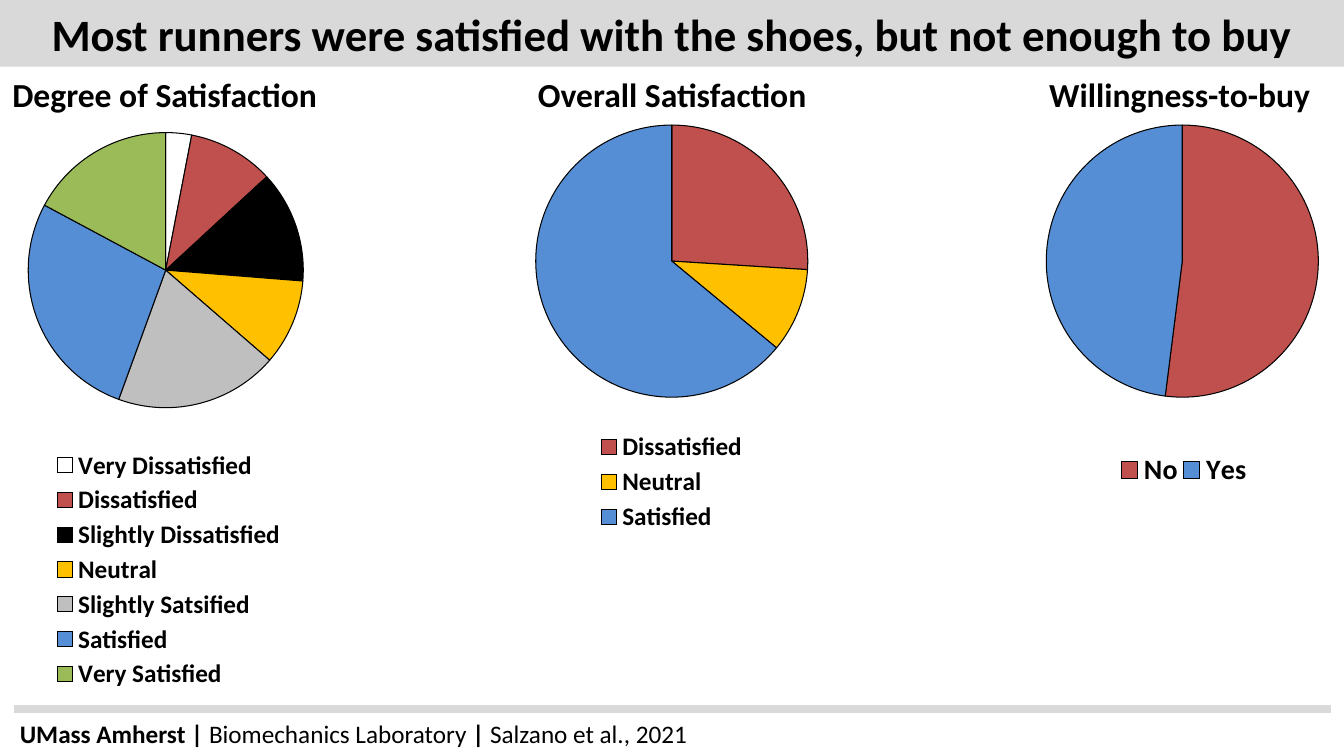
from dataclasses import dataclass

from lxml import etree
from pptx import Presentation
from pptx import util as u
from pptx.chart import data as cd
from pptx.dml.color import RGBColor
from pptx.enum import chart as ch, shapes, text
from pptx.oxml import ns

FACE = "Calibri"
BLACK, GREY = "000000", "D9D9D9"
RED, GOLD, BLUE = "C0504D", "FFC000", "558ED5"
PITCH = 12.79  # distance between columns, cm
Box = tuple[float, float, float, float]


@dataclass
class Slice:
    name: str
    value: int
    color: str


@dataclass
class Pie:
    title: str
    size: int  # legend text, points
    plot: Box  # fractions of the chart
    legend: Box
    cuts: list[Slice]


PIES = [
    Pie("Degree of Satisfaction", 18, (0.05, 0.06, 0.91, 0.46), (0.12, 0.58, 0.79, 0.41), [
        Slice("Very Dissatisfied", 3, "FFFFFF"),
        Slice("Dissatisfied", 10, RED),
        Slice("Slightly Dissatisfied", 13, BLACK),
        Slice("Neutral", 10, GOLD),
        Slice("Slightly Satsified", 19, "BFBFBF"),
        Slice("Satisfied", 27, BLUE),
        Slice("Very Satisfied", 17, "9BBB59"),
    ]),
    Pie("Overall Satisfaction", 18, (0.05, 0.05, 0.9, 0.45), (0.25, 0.55, 0.5, 0.18), [
        Slice("Dissatisfied", 26, RED),
        Slice("Neutral", 10, GOLD),
        Slice("Satisfied", 64, BLUE),
    ]),
    Pie("Willingness-to-buy", 20, (0.06, 0.05, 0.9, 0.45), (0.29, 0.59, 0.45, 0.06), [
        Slice("No", 52, RED),
        Slice("Yes", 48, BLUE),
    ]),
]


def rgb(code: str) -> RGBColor:
    return RGBColor.from_string(code)


def style(font, size: float, bold: bool = False) -> None:
    font.name, font.size, font.bold = FACE, u.Pt(size), bold
    font.color.rgb = rgb(BLACK)


def write(frame, runs: list[tuple[str, bool]], size: float, align) -> None:
    frame.word_wrap = True
    para = frame.paragraphs[0]
    para.alignment = align
    for words, bold in runs:
        run = para.add_run()
        run.text = words
        style(run.font, size, bold)


def label(slide, box: Box, runs: list[tuple[str, bool]], size: float, align) -> None:
    shape = slide.shapes.add_textbox(*map(u.Cm, box))
    write(shape.text_frame, runs, size, align)


def place(node, box: Box, spot: int, inner: bool = False) -> None:
    """Give a chart element a manual layout as its child number spot."""
    for old in node.findall(ns.qn("c:layout")):
        node.remove(old)
    root = etree.Element(ns.qn("c:layout"))
    hand = etree.SubElement(root, ns.qn("c:manualLayout"))
    pairs = [("layoutTarget", "inner")] if inner else []
    pairs += [("xMode", "edge"), ("yMode", "edge"), *zip("xywh", map(str, box))]
    for tag, val in pairs:
        etree.SubElement(hand, ns.qn(f"c:{tag}")).set("val", val)
    node.insert(spot, root)


def draw(slide, pie: Pie, left: float) -> None:
    data = cd.CategoryChartData()
    data.categories = [cut.name for cut in pie.cuts]
    data.add_series("Series 1", [cut.value for cut in pie.cuts])
    box = map(u.Cm, (left + 0.33, 2.39, 7.62, 15.24))
    chart = slide.shapes.add_chart(ch.XL_CHART_TYPE.PIE, *box, data).chart
    chart.has_title = False
    style(chart.font, 10)
    plot = chart.plots[0]
    plot.vary_by_categories = True
    for i, cut in enumerate(pie.cuts):
        form = plot.series[0].points[i].format
        form.fill.solid()
        form.fill.fore_color.rgb = rgb(cut.color)
        form.line.color.rgb = rgb(BLACK)
        form.line.width = u.Pt(0.75)

    # Legend and manual places
    chart.has_legend = True
    key = chart.legend
    key.position = ch.XL_LEGEND_POSITION.BOTTOM
    key.include_in_layout = False
    style(key.font, pie.size, True)
    place(next(chart.element.iter(ns.qn("c:plotArea"))), pie.plot, 0, True)
    place(next(chart.element.iter(ns.qn("c:legend"))), pie.legend, 1)


def main() -> None:
    deck = Presentation()
    deck.slide_width, deck.slide_height = u.Cm(33.87), u.Cm(19.05)
    slide = deck.slides.add_slide(deck.slide_layouts[6])
    mid = text.PP_ALIGN.CENTER

    # Footer
    label(slide, (0.25, 17.98, 22.81, 1.02), [
        ("UMass Amherst | ", True), ("Biomechanics Laboratory ", False),
        ("| ", True), ("Salzano et al., 2021", False),
    ], 18, text.PP_ALIGN.LEFT)
    ends = map(u.Cm, (0.36, 17.86, 33.55, 17.86))
    rule = slide.shapes.add_connector(shapes.MSO_CONNECTOR.STRAIGHT, *ends)
    rule.line.color.rgb = rgb(GREY)
    rule.line.width = u.Pt(6)
    etree.SubElement(rule.element.spPr, ns.qn("a:effectLst"))

    # Title band
    band = slide.shapes.add_shape(
        shapes.MSO_SHAPE.RECTANGLE, 0, 0, deck.slide_width, u.Cm(1.68))
    band.shadow.inherit = False
    band.fill.solid()
    band.fill.fore_color.rgb = rgb(GREY)
    band.line.fill.background()
    band.text_frame.vertical_anchor = text.MSO_ANCHOR.MIDDLE
    write(band.text_frame, [
        ("Most runners were satisfied with the shoes, but not enough to buy", True),
    ], 32, mid)

    # Pies with their headings
    for i, pie in enumerate(PIES):
        draw(slide, pie, i * PITCH)
        label(slide, (i * PITCH, 1.73, 8.3, 1.27), [(pie.title, True)], 24, mid)

    deck.save("out.pptx")


if __name__ == "__main__":
    main()
